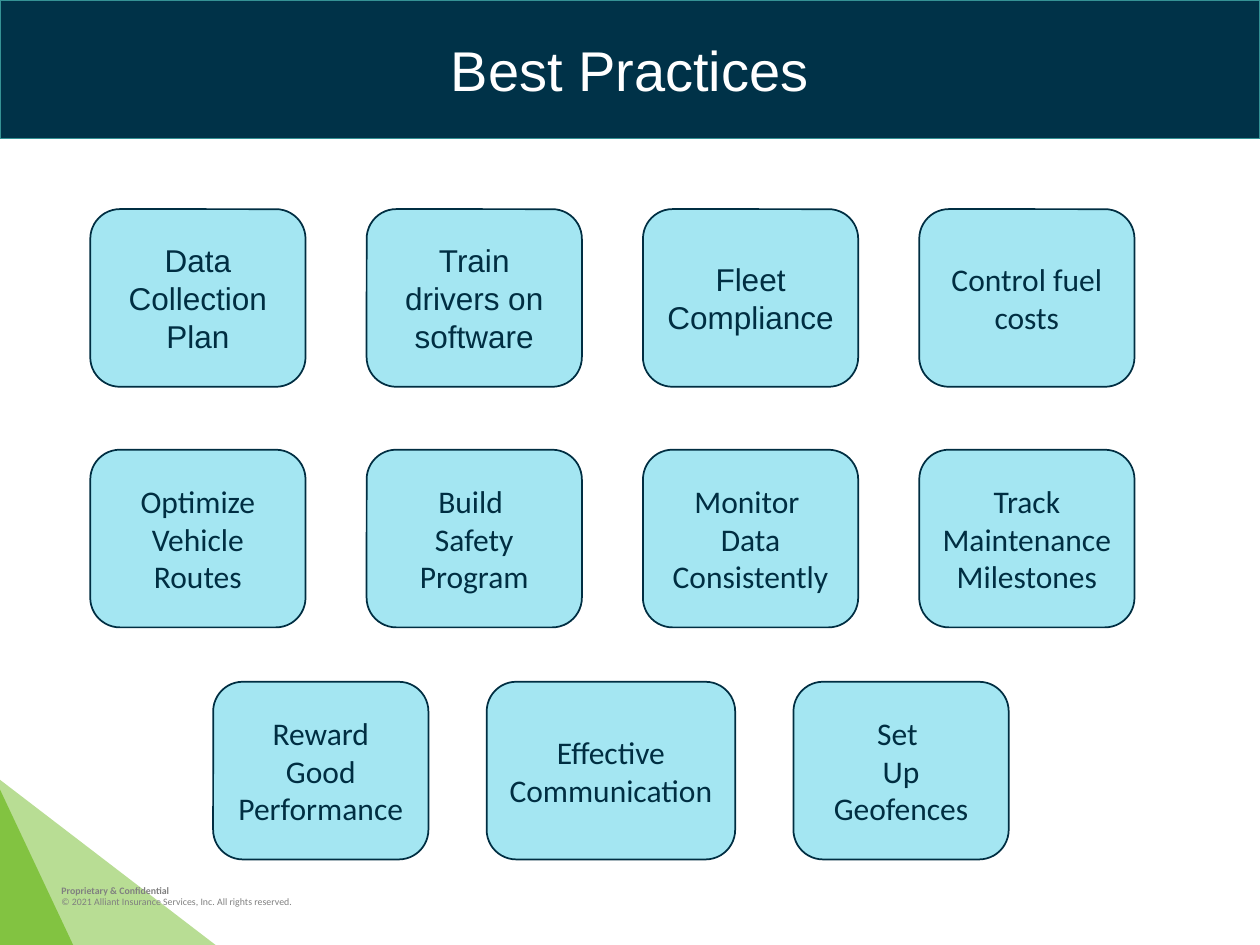
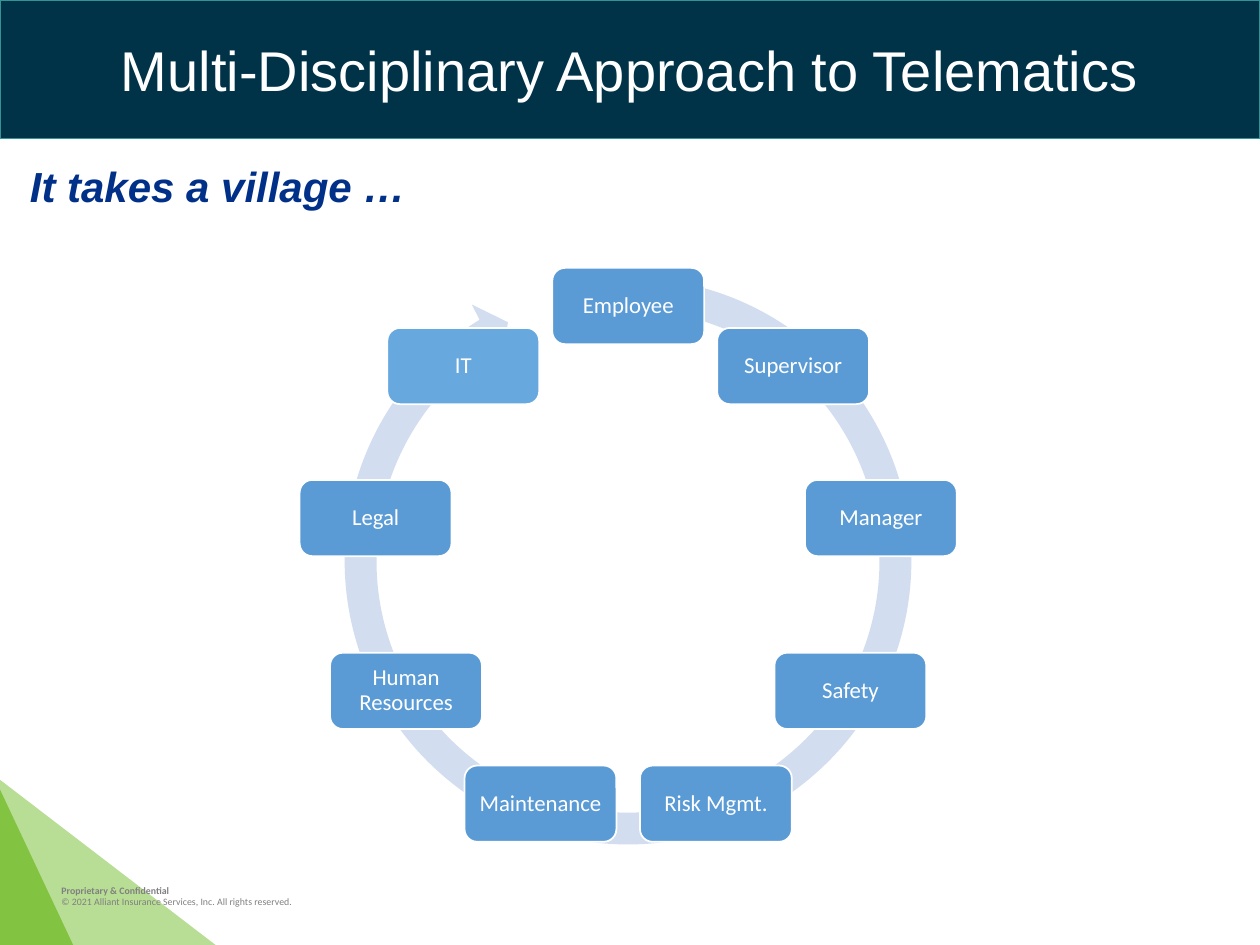
import math
from typing import NamedTuple

from lxml import etree
from pptx import Presentation
from pptx.dml.color import RGBColor
from pptx.enum import shapes, text
from pptx.oxml import ns
from pptx.util import Pt

BAND, BAND_EDGE, WHITE = "003248", "359295", "FFFFFF"
LEAF, FOOTER_GREY = "82C341", "808080"
TILE, INK, MOTTO_BLUE = "A4E6F2", "002E42", "003087"
RING, ROLE_BLUE, LAST_ROLE_BLUE = "D2DEEF", "5B9BD5", "67A9DF"


class Box(NamedTuple):
    left: float
    top: float
    width: float
    height: float


class Style(NamedTuple):
    size: float
    color: str
    font: str = "Calibri"
    bold: bool = False
    italic: bool = False
    align: text.PP_ALIGN = text.PP_ALIGN.CENTER
    line_spacing: float = 1.0


class Practice(NamedTuple):
    label: str
    font: str = "Calibri"
    width: float = 123


class PracticeRow(NamedTuple):
    left: float
    top: float
    gap: float
    practices: list[Practice]


SLIDE = Box(0, 0, 720, 540)
TITLE_BOX = Box(0, 0, 720, 79.2)
TITLE_STYLE = Style(32, WHITE, "Arial")
LEAVES = [(Box(0, 445.6, 123.2, 94.4), 56), (Box(0, 451.2, 41.8, 88.8), 100)]
FOOTER_BOX = Box(28, 501.8, 218, 21)
FOOTER = [("Proprietary & Confidential", True),
          ("© 2021 Alliant Insurance Services, Inc. All rights reserved.", False)]

TILE_HEIGHT = 101.5
PRACTICE_ROWS = [
    PracticeRow(51.6, 119.5, 34.9, [
        Practice("Data Collection Plan", "Arial"),
        Practice("Train drivers on software", "Arial"),
        Practice("Fleet Compliance", "Arial"),
        Practice("Control fuel costs")]),
    PracticeRow(51.6, 257, 34.9, [
        Practice("Optimize Vehicle Routes"),
        Practice("Build \nSafety Program"),
        Practice("Monitor \nData Consistently"),
        Practice("Track Maintenance Milestones")]),
    PracticeRow(121.8, 389.6, 33.3, [
        Practice("Reward Good Performance"),
        Practice("Effective Communication", width=142),
        Practice("Set \nUp Geofences")]),
]

ROLES = ["Employee", "Supervisor", "Manager", "Safety", "Risk Mgmt.",
         "Maintenance", "Human Resources", "Legal", "IT"]
ROLE_STYLE = Style(13, WHITE, line_spacing=0.9)
ROLE_WIDTH, ROLE_HEIGHT = 86.8, 43.6
CYCLE_X, CYCLE_Y, CYCLE_RADIUS = 359, 321.5, 146.6
CYCLE_BOX = Box(187.2, 149, 343.4, 343.4)
CYCLE_ADJUSTMENTS = [0.053, 3.126, 142.865, 170.93, 0.055]


def rgb(color: str) -> RGBColor:
    return RGBColor.from_string(color)


def lengths(box: Box) -> list[Pt]:
    return [Pt(value) for value in box]


def paint(shape, fill: str, edge: str | None = None, opacity: int = 100) -> None:
    shape.fill.solid()
    shape.fill.fore_color.rgb = rgb(fill)
    if opacity < 100:
        color = shape._element.spPr.find(".//" + ns.qn("a:srgbClr"))
        etree.SubElement(color, ns.qn("a:alpha"), val=str(opacity * 1000))
    if edge:
        shape.line.color.rgb = rgb(edge)
        shape.line.width = Pt(1)
    else:
        shape.line.fill.background()


def add_figure(slide, kind, box: Box, fill: str, edge: str | None = None,
               opacity: int = 100):
    figure = slide.shapes.add_shape(kind, *lengths(box))
    figure.shadow.inherit = False
    paint(figure, fill, edge, opacity)
    return figure


def format_paragraph(paragraph, style: Style) -> None:
    paragraph.alignment = style.align
    paragraph.line_spacing = style.line_spacing
    font = paragraph.font
    font.name, font.size = style.font, Pt(style.size)
    font.bold, font.italic = style.bold, style.italic
    font.color.rgb = rgb(style.color)


def write(shape, label: str, style: Style,
          anchor=text.MSO_ANCHOR.MIDDLE, inset: float | None = None) -> None:
    frame = shape.text_frame
    frame.word_wrap = True
    frame.auto_size = text.MSO_AUTO_SIZE.NONE
    frame.vertical_anchor = anchor
    if inset is not None:
        frame.margin_left = frame.margin_right = Pt(inset)
        frame.margin_top = frame.margin_bottom = Pt(inset)
    frame.text = label
    for paragraph in frame.paragraphs:
        format_paragraph(paragraph, style)


def add_branded_slide(deck, heading: str):
    slide = deck.slides.add_slide(deck.slide_layouts[5])
    title = slide.shapes.title
    title.left, title.top, title.width, title.height = lengths(TITLE_BOX)
    paint(title, BAND, BAND_EDGE)
    write(title, heading, TITLE_STYLE)
    for box, opacity in LEAVES:
        add_figure(slide, shapes.MSO_SHAPE.RIGHT_TRIANGLE, box, LEAF, opacity=opacity)
    footer = slide.shapes.add_textbox(*lengths(FOOTER_BOX))
    write(footer, "\n".join(line for line, _ in FOOTER),
          Style(5.6, FOOTER_GREY, align=text.PP_ALIGN.LEFT), text.MSO_ANCHOR.TOP)
    for paragraph, (_, bold) in zip(footer.text_frame.paragraphs, FOOTER):
        paragraph.font.bold = bold
    return slide


def add_practice_row(slide, row: PracticeRow) -> None:
    left = row.left
    for practice in row.practices:
        tile = add_figure(slide, shapes.MSO_SHAPE.ROUNDED_RECTANGLE,
                          Box(left, row.top, practice.width, TILE_HEIGHT), TILE, INK)
        write(tile, practice.label, Style(18, INK, practice.font))
        left += practice.width + row.gap


def add_role_cycle(slide) -> None:
    cycle = add_figure(slide, shapes.MSO_SHAPE.CIRCULAR_ARROW, CYCLE_BOX, RING)
    for index, value in enumerate(CYCLE_ADJUSTMENTS):
        cycle.adjustments[index] = value
    for index, role in enumerate(ROLES):
        angle = math.tau * index / len(ROLES)
        box = Box(CYCLE_X + CYCLE_RADIUS * math.sin(angle) - ROLE_WIDTH / 2,
                  CYCLE_Y - CYCLE_RADIUS * math.cos(angle) - ROLE_HEIGHT / 2,
                  ROLE_WIDTH, ROLE_HEIGHT)
        fill = LAST_ROLE_BLUE if role == ROLES[-1] else ROLE_BLUE
        card = add_figure(slide, shapes.MSO_SHAPE.ROUNDED_RECTANGLE, box, fill, WHITE)
        write(card, role, ROLE_STYLE, inset=3.6)


def main() -> None:
    deck = Presentation()
    deck.slide_width, deck.slide_height = Pt(SLIDE.width), Pt(SLIDE.height)

    best_practices = add_branded_slide(deck, "Best Practices")
    for row in PRACTICE_ROWS:
        add_practice_row(best_practices, row)

    approach = add_branded_slide(deck, "Multi-Disciplinary Approach to Telematics")
    motto = approach.shapes.add_textbox(*lengths(Box(10, 88, 236, 36)))
    write(motto, "It takes a village …",
          Style(24, MOTTO_BLUE, "Arial", True, True, text.PP_ALIGN.LEFT),
          text.MSO_ANCHOR.TOP)
    add_role_cycle(approach)

    deck.save("out.pptx")


if __name__ == "__main__":
    main()
